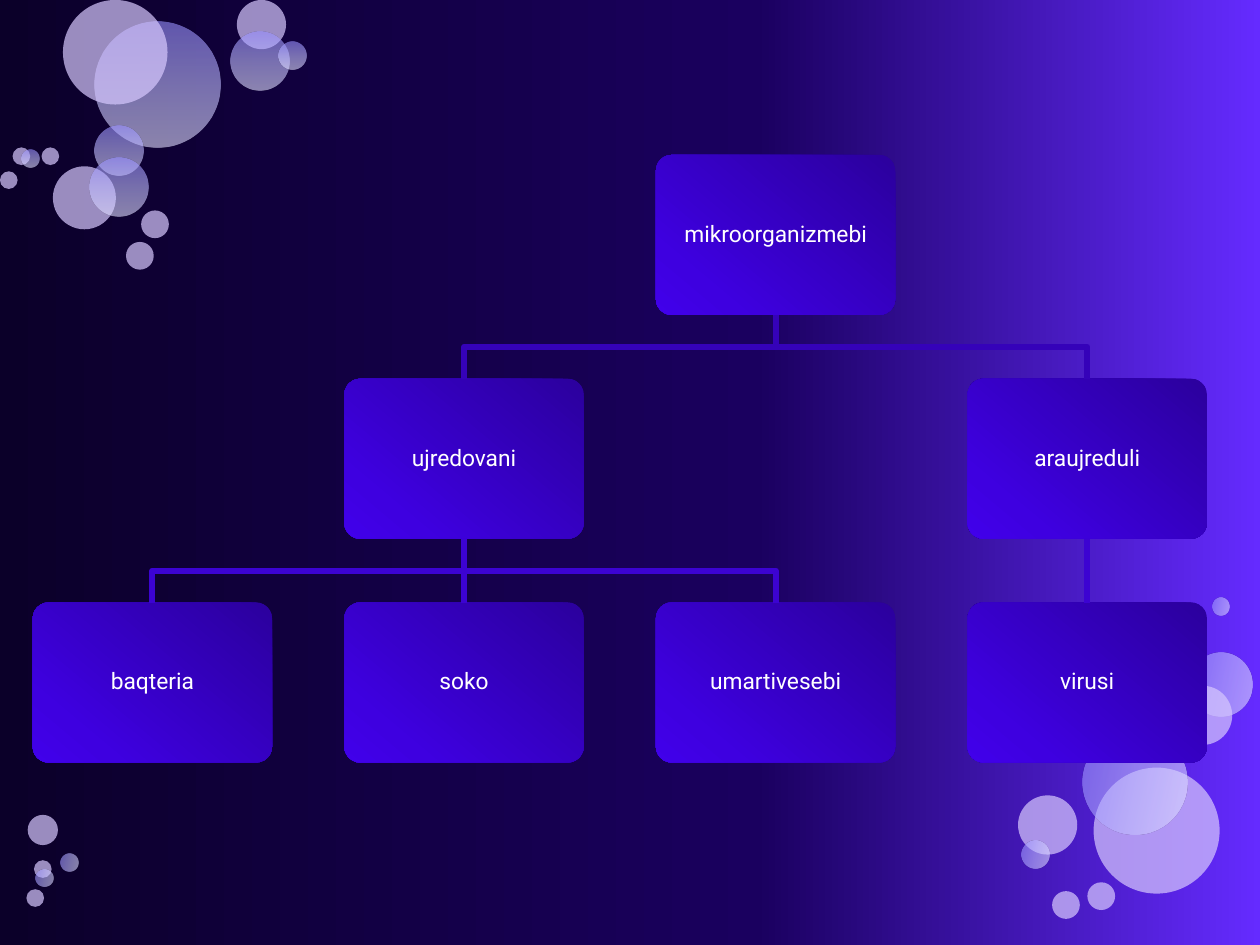
import pptx
import pptx.dml.color
import pptx.enum.shapes
import pptx.enum.text
import pptx.oxml.ns
import pptx.util
from lxml import etree

W, H = 10, 7.5
SHAPE = pptx.enum.shapes.MSO_SHAPE
inch = pptx.util.Inches
qn = pptx.oxml.ns.qn

BACKDROP = [(0, "0B0029"), (60, "1A005F"), (100, "652BFF")]
BOX_FILL = [(0, "2B009D"), (80, "3E00E0"), (100, "4100EA")]
BUBBLE_FILL = [(0, "9890FF"), (50, "BFBBFF"), (100, "E0DEFF")]
BUBBLE_PLAIN = "D7C8FE"

# Bubbles: x and y inside the cluster box, diameter, gradient or plain
TOP_LEFT = [
    (0.75, 0.17, 1, True), (0.42, 1.32, 0.5, False), (0.75, 1, 0.39, True),
    (0.71, 1.25, 0.47, True), (0.5, 0, 0.83, False), (1.88, 0, 0.39, False),
    (1.83, 0.25, 0.47, True), (2.21, 0.33, 0.22, True), (1.12, 1.67, 0.22, False),
    (0.1, 1.17, 0.14, False), (1, 1.92, 0.22, False), (0, 1.36, 0.14, False),
    (0.17, 1.19, 0.14, True), (0.33, 1.17, 0.14, False),
]
BOTTOM_RIGHT = [
    (0.68, 1.39, 1, False), (1.44, 0.48, 0.5, True), (1.07, 0.72, 0.39, False),
    (1.31, 0.74, 0.47, False), (0.59, 1.09, 0.83, True), (0.08, 1.61, 0.47, False),
    (0.11, 1.97, 0.22, True), (0.35, 2.37, 0.22, False), (1.41, 0.09, 0.14, False),
    (0.63, 2.3, 0.22, False), (1.62, 0.04, 0.14, True), (1.42, 0.17, 0.14, True),
    (1.36, 0.32, 0.14, False),
]
BOTTOM_LEFT = [
    (0.02, 0.07, 0.24, False), (0.07, 0.43, 0.14, False), (0.28, 0.38, 0.14, True),
    (0.08, 0.5, 0.14, True), (0.01, 0.66, 0.14, False),
]

# Chart nodes: name -> column, row; then parent -> children
NODES = {
    "mikroorganizmebi": (2, 0), "ujredovani": (1, 1), "araujreduli": (3, 1),
    "baqteria": (0, 2), "soko": (1, 2), "umartivesebi": (2, 2), "virusi": (3, 2),
}
LINKS = [
    ("mikroorganizmebi", "3502B9", ["ujredovani", "araujreduli"]),
    ("ujredovani", "3C03D2", ["baqteria", "soko", "umartivesebi"]),
    ("araujreduli", "3C03D2", ["virusi"]),
]
COL_STEP, ROW_STEP, BOX_W, BOX_H = 2.473, 1.776, 1.9, 1.27


def rgb(value):
    return pptx.dml.color.RGBColor.from_string(value)


def set_format(target, values):
    for name, value in values.items():
        setattr(target, name, value)


def set_alpha(parent, percent):
    for clr in parent.iter(qn("a:srgbClr")):
        etree.SubElement(clr, qn("a:alpha"), val=str(percent * 1000))


def set_gradient(fill, element, stops, angle):
    """Fill with any number of stops; the angle runs clockwise."""
    fill.gradient()
    grad = next(element.iter(qn("a:gradFill")))
    for child in list(grad):
        grad.remove(child)
    stop_list = etree.SubElement(grad, qn("a:gsLst"))
    for pos, color in stops:
        gs = etree.SubElement(stop_list, qn("a:gs"), pos=str(pos * 1000))
        etree.SubElement(gs, qn("a:srgbClr"), val=color)
    etree.SubElement(grad, qn("a:lin"), ang=str(round(angle * 60000)), scaled="0")
    return grad


def add_bubbles(s, box, bubbles, angle):
    left, top = box
    for x, y, size, shaded in bubbles:
        sp = s.shapes.add_shape(SHAPE.OVAL, inch(left + x), inch(top + y),
                                inch(size), inch(size))
        sp.shadow.inherit = False
        sp.line.fill.background()
        if shaded:
            set_alpha(set_gradient(sp.fill, sp.element, BUBBLE_FILL, angle), 60)
        else:
            sp.fill.solid()
            sp.fill.fore_color.rgb = rgb(BUBBLE_PLAIN)
            set_alpha(sp.element.spPr, 70)


def add_node(s, x, y, text):
    sp = s.shapes.add_shape(SHAPE.ROUNDED_RECTANGLE, inch(x), inch(y),
                            inch(BOX_W), inch(BOX_H))
    sp.adjustments[0] = 0.1
    sp.shadow.inherit = False
    sp.line.fill.background()
    set_gradient(sp.fill, sp.element, BOX_FILL, 130)
    tf = sp.text_frame
    margins = dict.fromkeys(
        ["margin_left", "margin_right", "margin_top", "margin_bottom"], inch(0.05))
    set_format(tf, {"word_wrap": True,
                    "vertical_anchor": pptx.enum.text.MSO_ANCHOR.MIDDLE, **margins})
    p = tf.paragraphs[0]
    set_format(p, {"alignment": pptx.enum.text.PP_ALIGN.CENTER, "line_spacing": 0.9})
    r = p.add_run()
    r.text = text
    set_format(r.font, {"name": "Roboto", "size": pptx.util.Pt(13)})
    r.font.color.rgb = rgb("FFFFFF")
    return sp


def add_link(s, parent, child, color):
    x1, y1 = parent.left + parent.width // 2, parent.top + parent.height
    x2, y2 = child.left + child.width // 2, child.top
    if x1 == x2:
        line = s.shapes.add_connector(pptx.enum.shapes.MSO_CONNECTOR.STRAIGHT,
                                      x1, y1, x2, y2)
        line.begin_connect(parent, 2)
        line.end_connect(child, 0)
        etree.SubElement(line.element.spPr, qn("a:effectLst"))
    else:
        mid = (y1 + y2) // 2
        builder = s.shapes.build_freeform(x1, y1)
        builder.add_line_segments([(x1, mid), (x2, mid), (x2, y2)], close=False)
        line = builder.convert_to_shape()
        line.fill.background()
        line.shadow.inherit = False
    line.line.color.rgb = rgb(color)
    line.line.width = pptx.util.Pt(3.5)


def add_tree(s, box):
    left, top = box
    nodes = {name: add_node(s, left + col * COL_STEP, top + row * ROW_STEP, name)
             for name, (col, row) in NODES.items()}
    for parent, color, children in LINKS:
        for child in children:
            add_link(s, nodes[parent], nodes[child], color)


def main():
    prs = pptx.Presentation()
    set_format(prs, {"slide_width": inch(W), "slide_height": inch(H)})
    s = prs.slides.add_slide(prs.slide_layouts[6])

    # Background
    set_gradient(s.background.fill, s.element, BACKDROP, 0)

    # Bubble clusters in three corners
    add_bubbles(s, (0, 0), TOP_LEFT, 90)
    add_bubbles(s, (W * 0.8, H * 0.627), BOTTOM_RIGHT, 13.3)
    add_bubbles(s, (W * 0.02, H * 0.853), BOTTOM_LEFT, 13.3)

    # Hierarchy of microorganisms
    add_tree(s, (W * 0.026, H * 0.164))

    prs.save("out.pptx")


if __name__ == "__main__":
    main()
